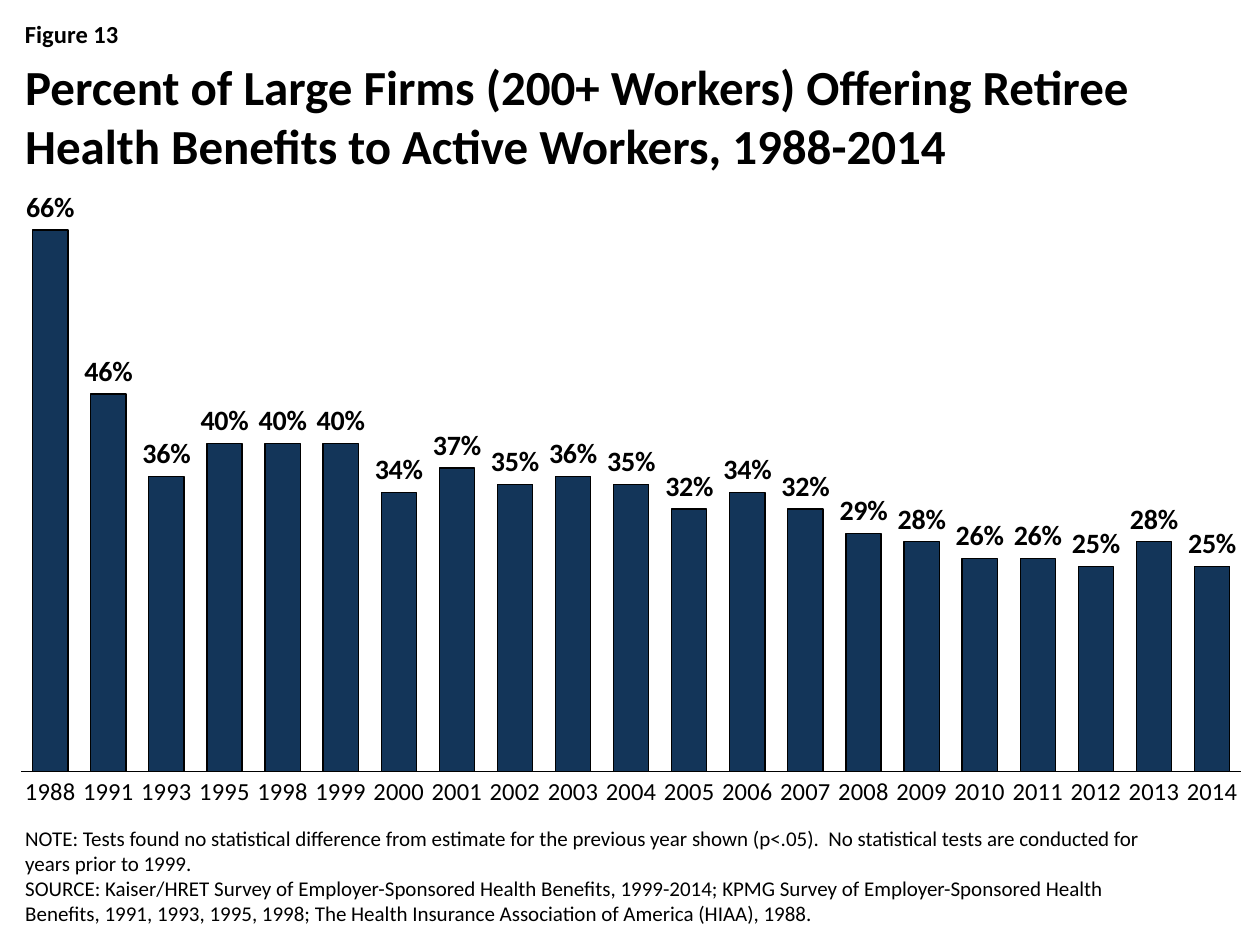
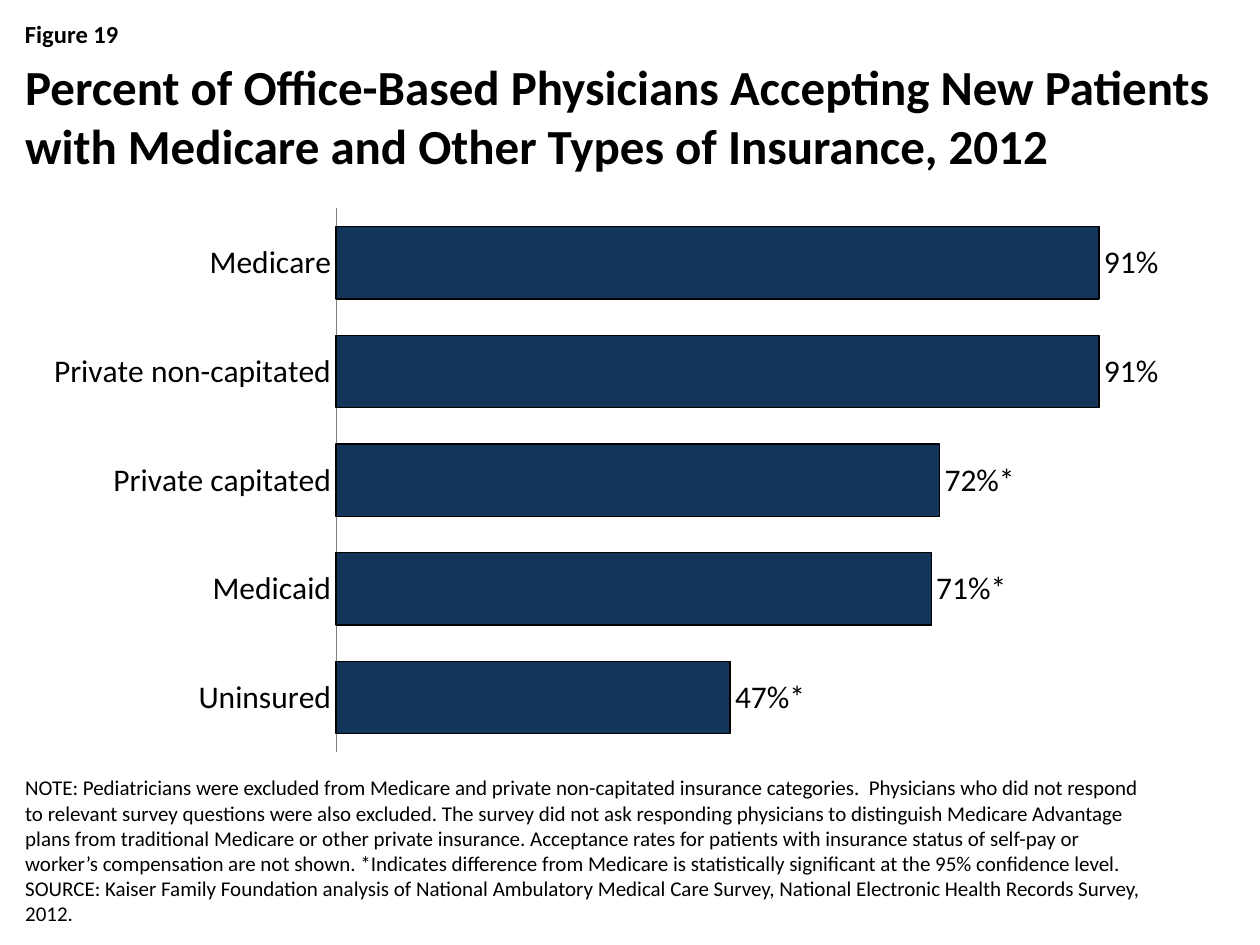
from lxml import etree
from pptx import Presentation
from pptx.chart.data import CategoryChartData
from pptx.dml.color import RGBColor
from pptx.enum.chart import XL_CHART_TYPE, XL_LABEL_POSITION, XL_TICK_MARK
from pptx.enum.text import MSO_ANCHOR, MSO_AUTO_SIZE, PP_ALIGN
from pptx.oxml.ns import qn
from pptx.util import Inches, Pt

BLACK = RGBColor(0x00, 0x00, 0x00)
GRAY = RGBColor(0x80, 0x80, 0x80)
NAVY = RGBColor(0x13, 0x35, 0x59)
FONT = "Calibri"
LEFT, FULL_WIDTH, NOTE_WIDTH, BOTTOM = 0.1, 9.8, 9.1, 7.4

FIGURES = [
    dict(
        tag="Figure 13",
        title="Percent of Large Firms (200+ Workers) Offering Retiree Health "
              "Benefits to Active Workers, 1988-2014",
        notes=[
            "NOTE: Tests found no statistical difference from estimate for the previous "
            "year shown (p<.05).  No statistical tests are conducted for years prior to 1999.",
            "SOURCE: Kaiser/HRET Survey of Employer-Sponsored Health Benefits, 1999-2014; "
            "KPMG Survey of Employer-Sponsored Health Benefits, 1991, 1993, 1995, 1998; "
            "The Health Insurance Association of America (HIAA), 1988.",
        ],
        note_height=1.32,
        chart=dict(
            kind=XL_CHART_TYPE.COLUMN_CLUSTERED, top=1.42, height=5.17,
            plot_box=(0.007, 0.028, 0.988, 0.882),
            categories=["1988", "1991", "1993", "1995"]
                       + [str(year) for year in range(1998, 2015)],
            values=[0.66, 0.46, 0.36, 0.40, 0.40, 0.40, 0.34, 0.37, 0.35, 0.36, 0.35,
                    0.32, 0.34, 0.32, 0.29, 0.28, 0.26, 0.26, 0.25, 0.28, 0.25],
            gap=65, axis_max=0.7, major=0.1, axis_size=14, label_size=16,
            label_bold=True, axis_color=BLACK),
    ),
    dict(
        tag="Figure 19",
        title="Percent of Office-Based Physicians Accepting New Patients with "
              "Medicare and Other Types of Insurance, 2012",
        notes=[
            "NOTE: Pediatricians were excluded from Medicare and private non-capitated "
            "insurance categories.  Physicians who did not respond to relevant survey "
            "questions were also excluded. The survey did not ask responding physicians to "
            "distinguish Medicare Advantage plans from traditional Medicare or other private "
            "insurance. Acceptance rates for patients with insurance status of self-pay or "
            "worker’s compensation are not shown. *Indicates difference from Medicare is "
            "statistically significant at the 95% confidence level.",
            "SOURCE: Kaiser Family Foundation analysis of National Ambulatory Medical Care "
            "Survey, National Electronic Health Records Survey, 2012.",
        ],
        note_height=0.6,
        chart=dict(
            kind=XL_CHART_TYPE.BAR_CLUSTERED, top=1.5, height=4.83,
            plot_box=(0.262, 0.032, 0.679, 0.893),
            categories=["Medicare", "Private non-capitated", "Private capitated",
                        "Medicaid", "Uninsured"],
            values=[0.91, 0.91, 0.72, 0.71, 0.47], significant=(2, 3, 4),
            gap=50, axis_max=1, major=0.2, axis_size=18, label_size=18,
            label_bold=False, axis_color=GRAY, reverse=True),
    ),
]


def set_font(font, size, bold=False):
    font.name, font.size, font.bold = FONT, Pt(size), bold
    font.color.rgb = BLACK


def write(sp, paragraphs, box, size, bold=False, anchor=MSO_ANCHOR.TOP):
    """Place a shape and fill it with plain, unbulleted paragraphs."""
    sp.left, sp.top, sp.width, sp.height = (Inches(v) for v in box)
    tf = sp.text_frame
    tf.word_wrap = True
    tf.auto_size = MSO_AUTO_SIZE.NONE
    tf.vertical_anchor = anchor
    for i, text in enumerate(paragraphs):
        p = tf.paragraphs[0] if i == 0 else tf.add_paragraph()
        pPr = p._p.get_or_add_pPr()
        pPr.set("marL", "0")
        pPr.set("indent", "0")
        etree.SubElement(pPr, qn("a:buNone"))
        p.alignment = PP_ALIGN.LEFT
        p.space_before = p.space_after = Pt(0)
        r = p.add_run()
        r.text = text
        set_font(r.font, size, bold)


def set_plot_box(chart, box):
    """Fix the inner plot area, given as fractions of the chart frame."""
    area = chart._chartSpace.chart.plotArea
    for old in area.findall(qn("c:layout")):
        area.remove(old)
    layout = etree.Element(qn("c:layout"))
    manual = etree.SubElement(layout, qn("c:manualLayout"))
    settings = [("layoutTarget", "inner"), ("xMode", "edge"), ("yMode", "edge")]
    settings += zip("xywh", box)
    for name, value in settings:
        etree.SubElement(manual, qn(f"c:{name}")).set("val", str(value))
    area.insert(0, layout)


def add_percent_chart(slide, kind, top, height, plot_box, categories, values, gap,
                      axis_max, major, axis_size, label_size, label_bold, axis_color,
                      significant=(), reverse=False):
    data = CategoryChartData(number_format="0%")
    data.categories = categories
    data.add_series("Series 1", values)
    chart = slide.shapes.add_chart(kind, Inches(LEFT), Inches(top), Inches(FULL_WIDTH),
                                   Inches(height), data).chart
    chart.has_legend = chart.has_title = False
    set_font(chart.font, label_size)
    set_plot_box(chart, plot_box)

    value_axis = chart.value_axis
    value_axis.minimum_scale, value_axis.maximum_scale = 0, axis_max
    value_axis.major_unit = major
    value_axis.has_major_gridlines = False
    value_axis.visible = False

    axis = chart.category_axis
    axis.major_tick_mark = axis.minor_tick_mark = XL_TICK_MARK.NONE
    axis.reverse_order = reverse
    axis.format.line.color.rgb = axis_color
    axis.format.line.width = Pt(0.25)
    set_font(axis.tick_labels.font, axis_size)

    plot = chart.plots[0]
    plot.gap_width = gap
    plot.vary_by_categories = False
    series = plot.series[0]
    series.format.fill.solid()
    series.format.fill.fore_color.rgb = NAVY
    series.format.line.color.rgb = BLACK
    series.format.line.width = Pt(0.75)

    labels = series.data_labels
    labels.show_value = True
    labels.number_format, labels.number_format_is_linked = "0%", False
    labels.position = XL_LABEL_POSITION.OUTSIDE_END
    set_font(labels.font, label_size, label_bold)
    for i in significant:
        label = series.points[i].data_label
        r = label.text_frame.paragraphs[0].add_run()
        r.text = f"{values[i]:.0%}*"
        set_font(r.font, label_size, label_bold)
        label.position = XL_LABEL_POSITION.OUTSIDE_END


def add_figure(prs, tag, title, notes, note_height, chart):
    slide = prs.slides.add_slide(prs.slide_layouts[1])
    add_percent_chart(slide, **chart)
    tag_box = slide.shapes.add_textbox(0, 0, 0, 0)
    write(tag_box, [tag], (LEFT, 0.1, FULL_WIDTH, 0.34), 14, bold=True)
    write(slide.shapes.title, [title], (LEFT, 0.4, FULL_WIDTH, 1), 28, bold=True)
    write(slide.placeholders[1], notes,
          (LEFT, BOTTOM - note_height, NOTE_WIDTH, note_height), 12,
          anchor=MSO_ANCHOR.BOTTOM)


def main():
    prs = Presentation()
    prs.slide_width, prs.slide_height = Inches(10), Inches(7.5)
    for figure in FIGURES:
        add_figure(prs, **figure)
    prs.save("out.pptx")


if __name__ == "__main__":
    main()
